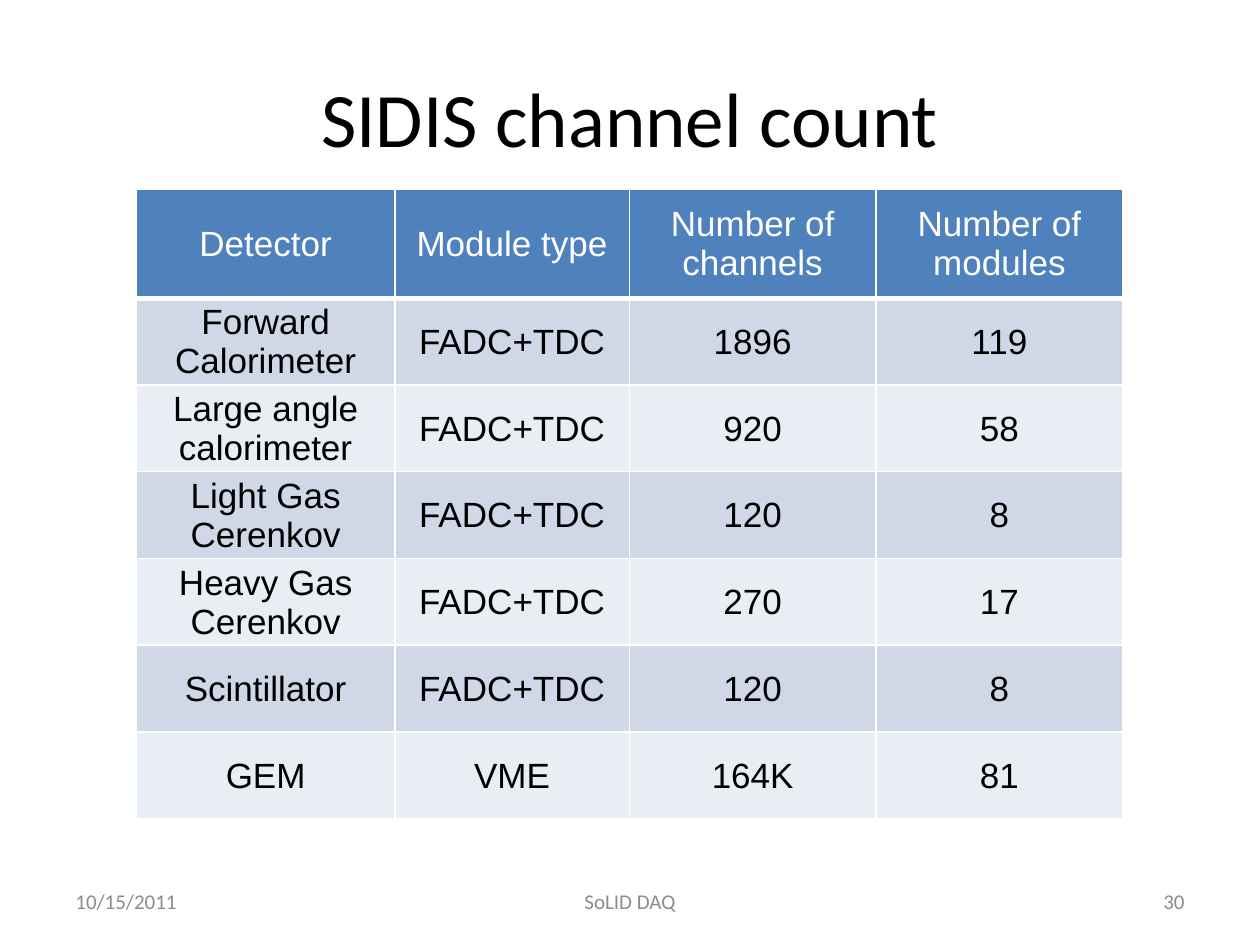
from lxml.etree import SubElement
from pptx import Presentation
from pptx.dml.color import RGBColor
from pptx.enum.text import MSO_ANCHOR, PP_ALIGN
from pptx.oxml.ns import qn
from pptx.util import Pt

COLORS = {
    "title": "000000",
    "footer": "8C8C8C",
    "header": "4F81BD",
    "header_text": "FFFFFF",
    "body_text": "000000",
    "odd": "D0D8E8",
    "even": "E9EDF4",
    "border": "FFFFFF",
}

ROWS = [
    ("Detector", "Module type", "Number of channels", "Number of modules"),
    ("Forward Calorimeter", "FADC+TDC", "1896", "119"),
    ("Large angle calorimeter", "FADC+TDC", "920", "58"),
    ("Light Gas Cerenkov", "FADC+TDC", "120", "8"),
    ("Heavy Gas Cerenkov", "FADC+TDC", "270", "17"),
    ("Scintillator", "FADC+TDC", "120", "8"),
    ("GEM", "VME", "164K", "81"),
]
COL_WIDTHS = (147.6, 134, 141, 141)
HEADER_HEIGHT = 62.4
ROW_HEIGHT = 49.6

FOOTERS = [
    ("10/15/2011", 36, 168, PP_ALIGN.LEFT),
    ("SoLID DAQ", 246, 228, PP_ALIGN.CENTER),
    ("30", 516, 168, PP_ALIGN.RIGHT),
]


def rgb(name):
    return RGBColor.from_string(COLORS[name])


def write(tf, text, font, size, color, align):
    p = tf.paragraphs[0]
    p.alignment = align
    r = p.add_run()
    r.text = text
    r.font.name = font
    r.font.size = Pt(size)
    r.font.bold = False
    r.font.color.rgb = rgb(color)


def add_text(s, text, box, size, color, align):
    tf = s.shapes.add_textbox(*map(Pt, box)).text_frame
    tf.word_wrap = True
    tf.vertical_anchor = MSO_ANCHOR.MIDDLE
    write(tf, text, "Calibri", size, color, align)


def set_borders(cell, bottom=1, top=1):
    tc_pr = cell._tc.get_or_add_tcPr()
    widths = {"a:lnL": 1, "a:lnR": 1, "a:lnT": top, "a:lnB": bottom}
    for i, (tag, width) in enumerate(widths.items()):
        ln = SubElement(tc_pr, qn(tag), w=str(Pt(width)))
        fill = SubElement(ln, qn("a:solidFill"))
        SubElement(fill, qn("a:srgbClr"), val=COLORS["border"])
        tc_pr.insert(i, ln)


def fill_cell(cell, text, row):
    header = row == 0
    cell.margin_left = cell.margin_right = cell.margin_top = Pt(0.75)
    cell.margin_bottom = Pt(0)
    cell.vertical_anchor = MSO_ANCHOR.MIDDLE
    cell.fill.solid()
    cell.fill.fore_color.rgb = rgb("header" if header else "odd" if row % 2 else "even")
    write(cell.text_frame, text, "Arial", 20,
          "header_text" if header else "body_text", PP_ALIGN.CENTER)
    set_borders(cell, bottom=3 if header else 1, top=3 if row == 1 else 1)


def add_channel_table(s):
    height = HEADER_HEIGHT + ROW_HEIGHT * (len(ROWS) - 1)
    frame = s.shapes.add_table(len(ROWS), len(COL_WIDTHS), Pt(78), Pt(108),
                               Pt(sum(COL_WIDTHS)), Pt(height))
    table = frame.table
    for col, width in zip(table.columns, COL_WIDTHS):
        col.width = Pt(width)
    for i, values in enumerate(ROWS):
        table.rows[i].height = Pt(ROW_HEIGHT if i else HEADER_HEIGHT)
        for j, text in enumerate(values):
            fill_cell(table.cell(i, j), text, i)


def add_title(s, text):
    add_text(s, text, (36, 21.6, 648, 90), 44, "title", PP_ALIGN.CENTER)


def add_footers(s):
    for text, left, width, align in FOOTERS:
        add_text(s, text, (left, 500.5, width, 28.75), 12, "footer", align)


def main():
    prs = Presentation()
    prs.slide_width, prs.slide_height = Pt(720), Pt(540)
    s = prs.slides.add_slide(prs.slide_layouts[6])
    add_title(s, "SIDIS channel count")
    add_channel_table(s)
    add_footers(s)
    prs.save("out.pptx")


if __name__ == "__main__":
    main()
